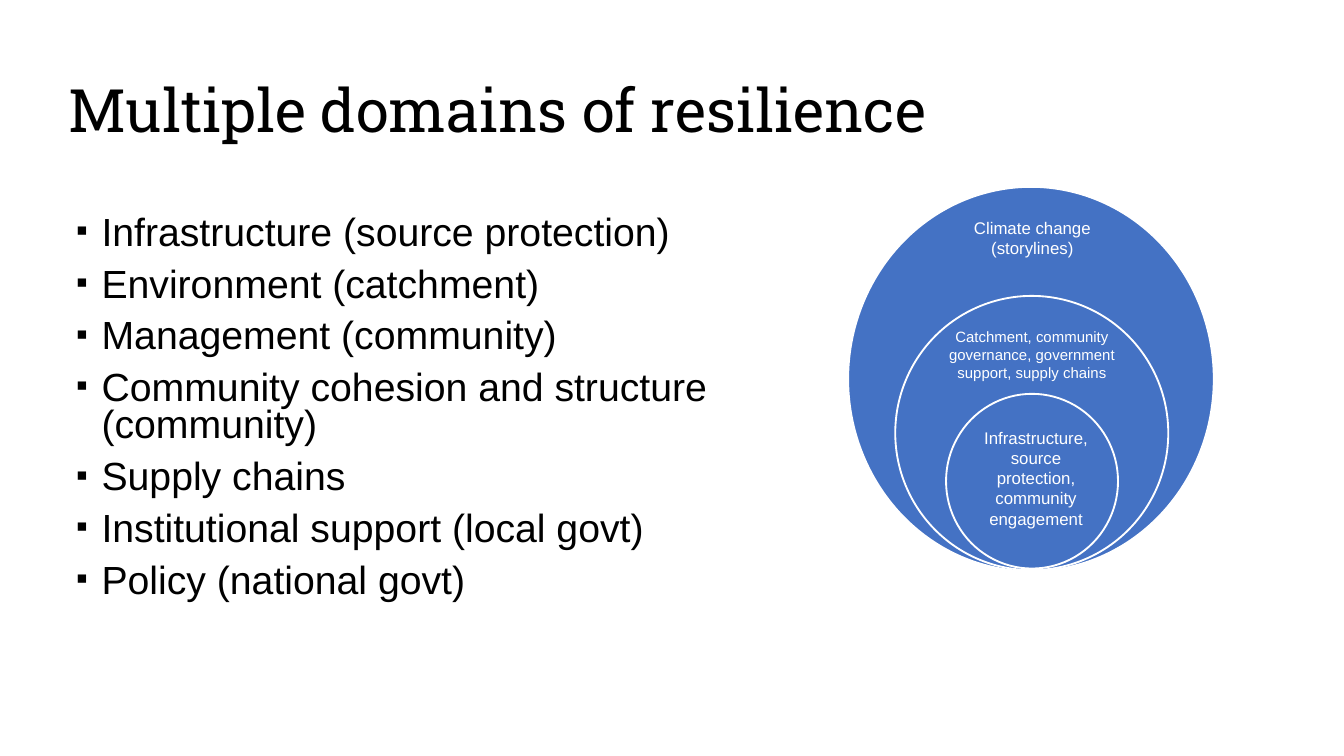
from lxml.etree import SubElement
from pptx import Presentation
from pptx.dml.color import RGBColor
from pptx.enum.shapes import MSO_SHAPE
from pptx.enum.text import MSO_ANCHOR, PP_ALIGN
from pptx.oxml.ns import qn
from pptx.util import Cm, Pt

BLACK = RGBColor(0x00, 0x00, 0x00)
WHITE = RGBColor(0xFF, 0xFF, 0xFF)
BLUE = RGBColor(0x44, 0x72, 0xC4)

prs = Presentation()
prs.slide_width, prs.slide_height = Cm(25.4), Cm(14.28)
s = prs.slides.add_slide(prs.slide_layouts[6])


def add_text(text, box, size, font="Arial", color=BLACK, align=PP_ALIGN.LEFT,
             anchor=MSO_ANCHOR.TOP, line_spacing=1.0, space_before=0, bullet=None):
    """Add a text box with one paragraph for each line of text."""
    tf = s.shapes.add_textbox(*map(Cm, box)).text_frame
    tf.word_wrap = True
    tf.vertical_anchor = anchor
    for i, line in enumerate(text.split("\n")):
        p = tf.paragraphs[0] if i == 0 else tf.add_paragraph()
        if bullet:
            pPr = p._p.get_or_add_pPr()
            pPr.set("marL", str(Cm(0.48)))
            pPr.set("indent", str(Cm(-0.48)))
            SubElement(pPr, qn("a:buSzPct"), val="85000")
            SubElement(pPr, qn("a:buFont"), typeface="Arial")
            SubElement(pPr, qn("a:buChar"), char=bullet)
        p.alignment = align
        p.line_spacing = line_spacing
        p.space_before = Pt(space_before if i else 0)
        r = p.add_run()
        r.text = line
        r.font.name = font
        r.font.size = Pt(size)
        r.font.color.rgb = color


# Title
add_text("Multiple domains of resilience", (1.04, 0.76, 23.34, 2.77), 32,
         font="Roboto Slab", anchor=MSO_ANCHOR.MIDDLE, line_spacing=0.9)

# Bullet list
domains = [
    "Infrastructure (source protection)",
    "Environment (catchment)",
    "Management (community)",
    "Community cohesion and structure (community)",
    "Supply chains",
    "Institutional support (local govt)",
    "Policy (national govt)",
]
add_text("\n".join(domains), (1.19, 3.96, 15.9, 8.13), 21,
         line_spacing=0.8, space_before=7.5, bullet="▪")

# Nested circles, outermost first
circles = [
    (16.03, 3.53, 6.91, 7.26),
    (16.92, 5.59, 5.16, 5.18),
    (17.88, 7.44, 3.25, 3.3),
]
for circle in circles:
    sp = s.shapes.add_shape(MSO_SHAPE.OVAL, *map(Cm, circle))
    sp.shadow.inherit = False
    sp.fill.solid()
    sp.fill.fore_color.rgb = BLUE
    sp.line.color.rgb = WHITE
    sp.line.width = Pt(1)

# Circle labels
labels = [
    ("Infrastructure, source protection, community engagement",
     (18.16, 7.95, 2.84, 2.18), 9),
    ("Catchment, community governance, government support, supply chains",
     (17.42, 6.07, 4.17, 1.27), 8),
    ("Climate change (storylines)", (18.06, 3.99, 2.9, 1.02), 9),
]
for text, box, size in labels:
    add_text(text, box, size, color=WHITE, align=PP_ALIGN.CENTER)

prs.save("out.pptx")
